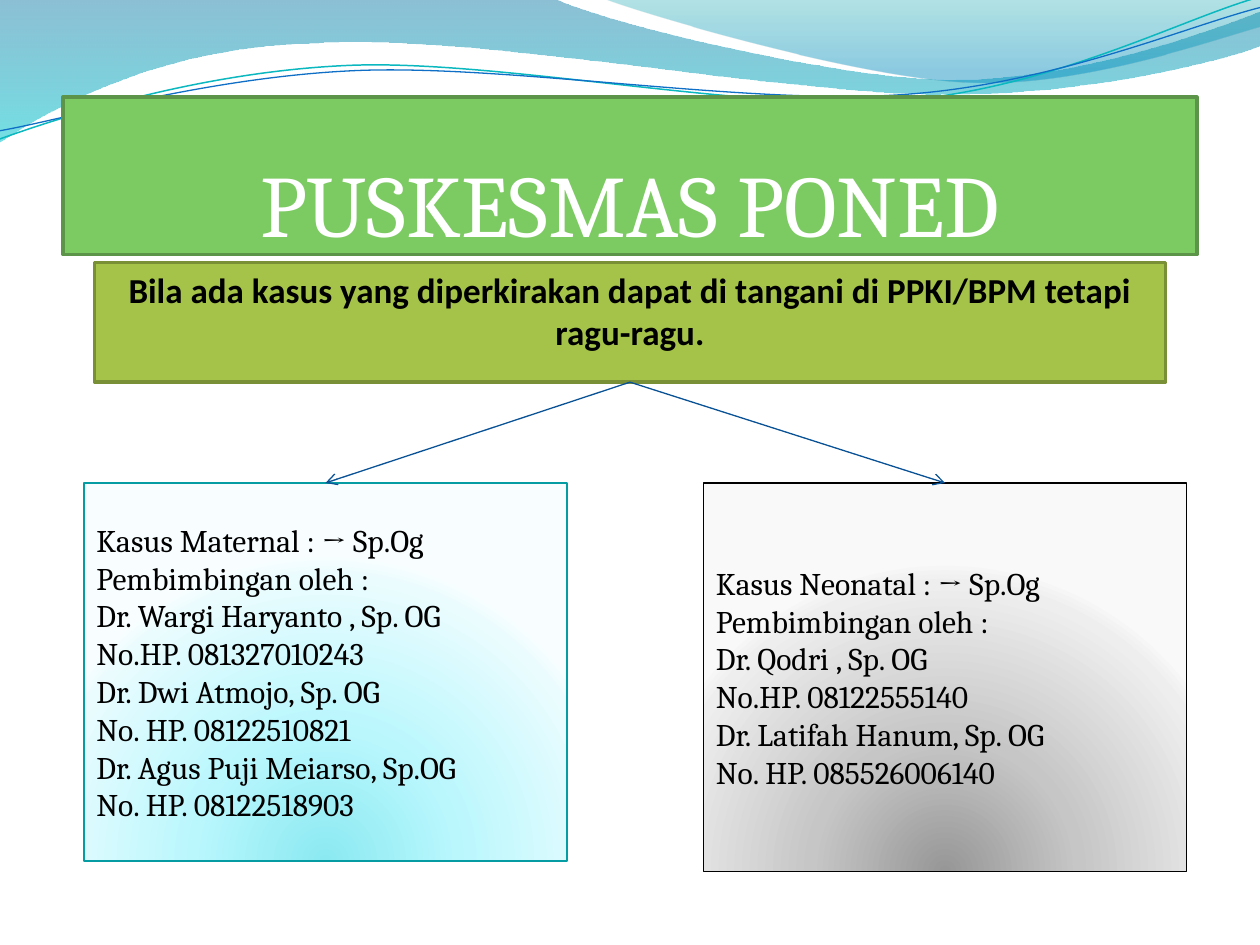
from dataclasses import dataclass

from pptx import Presentation
from pptx.dml.color import RGBColor
from pptx.enum.shapes import MSO_CONNECTOR, MSO_SHAPE
from pptx.enum.text import MSO_ANCHOR, MSO_AUTO_SIZE, PP_ALIGN
from pptx.oxml import parse_xml
from pptx.oxml.ns import nsdecls, qn
from pptx.util import Pt

RECT = MSO_SHAPE.RECTANGLE
STRAIGHT = MSO_CONNECTOR.STRAIGHT
TOP, MIDDLE, BOTTOM = MSO_ANCHOR.TOP, MSO_ANCHOR.MIDDLE, MSO_ANCHOR.BOTTOM
LEFT, CENTER = PP_ALIGN.LEFT, PP_ALIGN.CENTER
NO_AUTOFIT = MSO_AUTO_SIZE.NONE
TITLE_ONLY = 5
SIDE_TOP, SIDE_BOTTOM = 0, 2

COLORS = {
    "white": "FFFFFF", "black": "000000",
    "title": "7CCA62", "title_edge": "5C9549",
    "banner": "A5C249", "banner_edge": "7A9036",
    "maternal_edge": "069CA3", "arrow": "095295",
    "teal_line": "0AB8BF", "blue_line": "0F6FC6",
}
LINEAR = '<a:lin ang="5400000" scaled="0"/>'
RADIAL = '<a:path path="circle"><a:fillToRect l="50000" t="130000" r="50000" b="-30000"/></a:path>'


@dataclass
class Stop:
    pos: int
    color: str
    opacity: int = 100


@dataclass
class Wave:
    """Pairs are straight segments, six numbers are a cubic curve."""
    start: tuple
    segments: list
    stops: list | None = None
    line: str = ""
    width: float = 0


@dataclass
class CaseBox:
    left: float
    height: float
    edge: str
    shades: list
    lines: list


WAVES = [
    Wave((0, 0), [
        (316.8, -0.7),
        (342.7, 12.2, 478.1, 45.4, 545.8, 45.4),
        (614.2, 45.4, 689.8, 18.7, 720, 6.5),
        (720.7, 25.9),
        (707.8, 31.7, 626.4, 54.7, 537.1, 54),
        (447.8, 54, 275, 20.2, 185, 24.5),
        (92.9, 25.9, 33.1, 59.8, -0.7, 81.4),
    ], stops=[Stop(0, "0074A1", 45), Stop(100, "00C6CF", 55)]),
    Wave((344.9, -0.7), [
        (366.5, 7.9, 491, 44.6, 553.7, 46.8),
        (616.3, 49.7, 691.9, 23, 720, 15.1),
        (720, 0),
    ], stops=[Stop(0, "00A1A9", 30), Stop(80, "008BBF", 45)]),
    Wave((-1.4, 79.9), [
        (34.6, 67, 113.8, 41, 199.4, 37.4),
        (284.4, 33.8, 427, 64.1, 513.4, 57.6),
        (599.8, 51.1, 675.4, 10.8, 718.6, -1.4),
    ], line="teal_line", width=0.85),
    Wave((-1.4, 74.9), [
        (33.8, 69.1, 118.1, 43.9, 203.8, 40.3),
        (290.2, 36.7, 429.8, 60.5, 516.2, 54),
        (601.9, 48.2, 677.5, 15.1, 720, 4.3),
    ], line="blue_line", width=0.75),
]

CASES = [
    CaseBox(48, 216, "maternal_edge", ["8BE9F1", "B9F7FD", "EAFCFE", "F8FEFF"], [
        "Kasus Maternal : → Sp.Og",
        "Pembimbingan oleh :",
        "Dr. Wargi Haryanto , Sp. OG",
        "No.HP. 081327010243",
        "Dr. Dwi Atmojo, Sp. OG",
        "No. HP. 08122510821",
        "Dr. Agus Puji Meiarso, Sp.OG",
        "No. HP. 08122518903",
    ]),
    CaseBox(402, 222, "black", ["979797", "C6C6C6", "EEEEEE", "F9F9F9"], [
        "Kasus Neonatal : → Sp.Og",
        "Pembimbingan oleh :",
        "Dr. Qodri , Sp. OG",
        "No.HP. 08122555140",
        "Dr. Latifah Hanum, Sp. OG",
        "No. HP. 085526006140",
    ]),
]
SHADE_STOPS = (0, 43, 93, 100)


def rgb(name: str) -> RGBColor:
    return RGBColor.from_string(COLORS[name])


def set_line(sp, color: str, width: float) -> None:
    sp.line.color.rgb = rgb(color)
    sp.line.width = Pt(width)


def set_gradient(sp, stops: list, direction: str) -> None:
    gs = "".join(
        f'<a:gs pos="{g.pos * 1000}"><a:srgbClr val="{g.color}">'
        f'<a:alpha val="{g.opacity * 1000}"/></a:srgbClr></a:gs>' for g in stops)
    sp.fill.background()
    old = sp.element.spPr.find(qn("a:noFill"))
    old.getparent().replace(old, parse_xml(
        f'<a:gradFill rotWithShape="1" {nsdecls("a")}><a:gsLst>{gs}</a:gsLst>{direction}</a:gradFill>'))


def bend(sp, segments: list) -> None:
    """Merge each curve's three line steps into one cubic curve."""
    steps = iter(list(sp.element.iter(qn("a:lnTo"))))
    for seg in segments:
        step = next(steps)
        if len(seg) == 2:
            continue
        curve = parse_xml(f'<a:cubicBezTo {nsdecls("a")}/>')
        step.addprevious(curve)
        for part in (step, next(steps), next(steps)):
            curve.append(part[0])
            part.getparent().remove(part)


def draw_wave(s, wave: Wave) -> None:
    points = [(Pt(seg[i]), Pt(seg[i + 1])) for seg in wave.segments for i in range(0, len(seg), 2)]
    builder = s.shapes.build_freeform(Pt(wave.start[0]), Pt(wave.start[1]))
    builder.add_line_segments(points, close=bool(wave.stops))
    sp = builder.convert_to_shape()
    bend(sp, wave.segments)
    sp.shadow.inherit = False
    if wave.stops:
        set_gradient(sp, wave.stops, LINEAR)
        sp.line.fill.background()
    else:
        sp.fill.background()
        set_line(sp, wave.line, wave.width)


def add_box(s, left: float, top: float, width: float, height: float):
    sp = s.shapes.add_shape(RECT, Pt(left), Pt(top), Pt(width), Pt(height))
    sp.shadow.inherit = False
    return sp


def write(sp, lines: list, font: str, size: float, color: str, align, anchor, bold: bool = False) -> None:
    tf = sp.text_frame
    tf.word_wrap = True
    tf.auto_size = NO_AUTOFIT
    tf.vertical_anchor = anchor
    tf.text = "\n".join(lines)
    for p in tf.paragraphs:
        p.alignment = align
        p.font.name, p.font.size, p.font.bold = font, Pt(size), bold
        p.font.color.rgb = rgb(color)


def draw_case(s, case: CaseBox):
    sp = add_box(s, case.left, 276, 276, case.height)
    set_gradient(sp, [Stop(pos, shade) for pos, shade in zip(SHADE_STOPS, case.shades)], RADIAL)
    set_line(sp, case.edge, 0.75)
    write(sp, case.lines, "Cambria", 18, "black", LEFT, MIDDLE)
    return sp


def draw_arrow(s, source, target) -> None:
    cxn = s.shapes.add_connector(STRAIGHT, 0, 0, 0, 0)
    cxn.begin_connect(source, SIDE_BOTTOM)
    cxn.end_connect(target, SIDE_TOP)
    set_line(cxn, "arrow", 0.75)
    spPr = cxn.element.spPr
    spPr.find(qn("a:ln")).append(parse_xml(f'<a:tailEnd type="arrow" {nsdecls("a")}/>'))
    spPr.append(parse_xml(f'<a:effectLst {nsdecls("a")}/>'))


def main() -> None:
    prs = Presentation()
    prs.slide_width, prs.slide_height = Pt(720), Pt(540)
    s = prs.slides.add_slide(prs.slide_layouts[TITLE_ONLY])

    # Wave header
    for wave in WAVES:
        draw_wave(s, wave)

    # Title, raised above the waves
    title = s.shapes.title
    title.element.getparent().append(title.element)
    title.left, title.top, title.width, title.height = Pt(36), Pt(55.5), Pt(648), Pt(90)
    title.fill.solid()
    title.fill.fore_color.rgb = rgb("title")
    set_line(title, "title_edge", 2)
    write(title, ["PUSKESMAS PONED"], "Cambria", 50, "white", CENTER, BOTTOM)
    tf = title.text_frame
    tf.margin_left = tf.margin_right = tf.margin_bottom = 0

    # Banner and case boxes
    maternal = draw_case(s, CASES[0])
    banner = add_box(s, 54, 150, 612, 68.4)
    banner.fill.solid()
    banner.fill.fore_color.rgb = rgb("banner")
    set_line(banner, "banner_edge", 2)
    write(banner, ["Bila ada kasus yang diperkirakan dapat di tangani di PPKI/BPM tetapi ragu-ragu."],
          "Calibri", 20, "black", CENTER, TOP, bold=True)
    banner.text_frame.paragraphs[0].space_after = Pt(10)
    neonatal = draw_case(s, CASES[1])

    # Arrows
    for case in (maternal, neonatal):
        draw_arrow(s, banner, case)

    prs.save("out.pptx")


if __name__ == "__main__":
    main()
